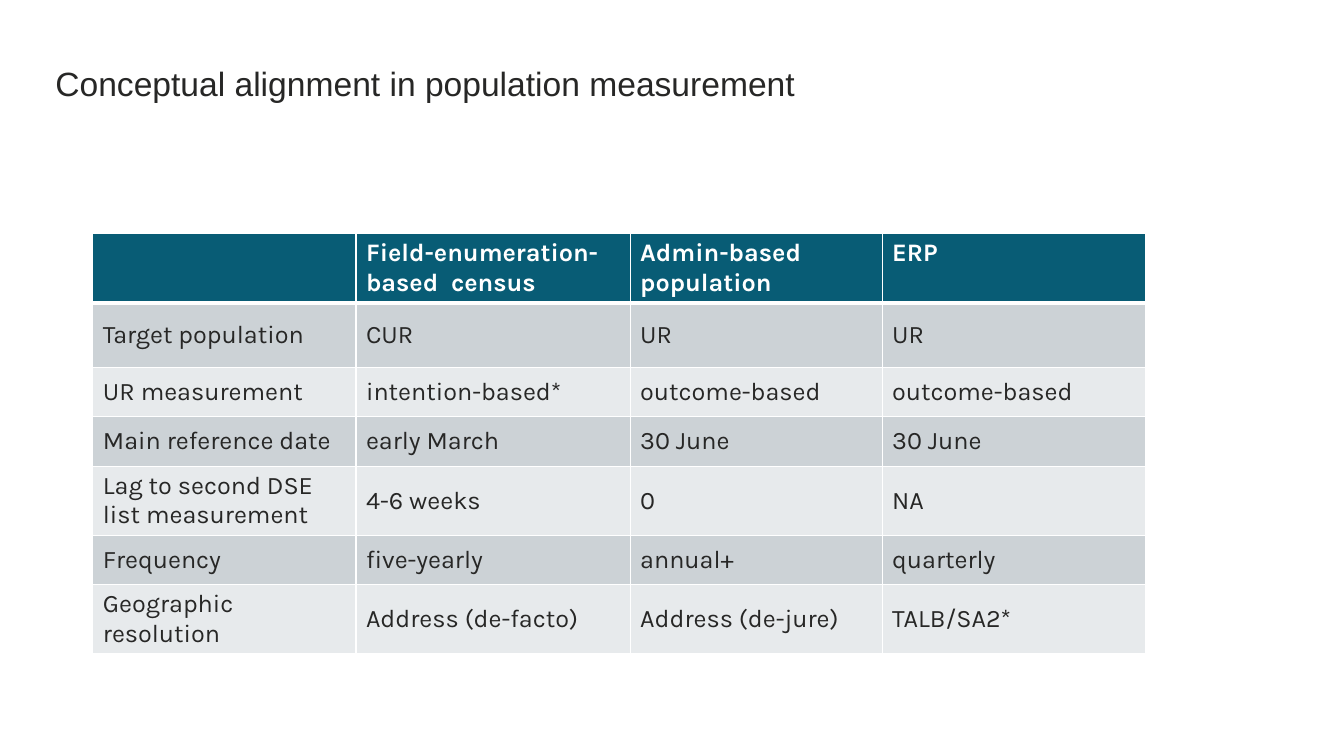
import pptx
import pptx.dml.color
import pptx.enum.text
import pptx.oxml
import pptx.oxml.ns
import pptx.util
from pptx.util import Cm

WHITE, INK, TEAL = "FFFFFF", "272726", "085C75"
BANDS = ("CCD2D6", "E7EAEC")
ANCHOR = pptx.enum.text.MSO_ANCHOR

MEASURES = [
    ("", "Field-enumeration-based  census", "Admin-based population", "ERP"),
    ("Target population", "CUR", "UR", "UR"),
    ("UR measurement", "intention-based*", "outcome-based", "outcome-based"),
    ("Main reference date", "early March", "30 June", "30 June"),
    ("Lag to second DSE list measurement", "4-6 weeks", "0", "NA"),
    ("Frequency", "five-yearly", "annual+", "quarterly"),
    ("Geographic resolution", "Address (de-facto)", "Address (de-jure)", "TALB/SA2*"),
]
COLUMN_WIDTHS = (6.63, 6.91, 6.35, 6.63)
ROW_HEIGHTS = (1.63, 1.63, 1.24, 1.24, 1.63, 1.24, 1.24)


def rgb(value):
    return pptx.dml.color.RGBColor.from_string(value)


def write(frame, text, font="Karla", size=18, color=INK, bold=False, anchor=ANCHOR.MIDDLE):
    frame.word_wrap = True
    frame.vertical_anchor = anchor
    paragraph = frame.paragraphs[0]
    paragraph.alignment = pptx.enum.text.PP_ALIGN.LEFT
    paragraph.font.size = pptx.util.Pt(size)
    if text:
        run = paragraph.add_run()
        run.text = text
        run.font.name = font
        run.font.size = pptx.util.Pt(size)
        run.font.bold = bold
        run.font.color.rgb = rgb(color)


def set_borders(cell, top=1, bottom=1):
    """Draw white cell edges; widths are in points."""
    properties = cell._tc.get_or_add_tcPr()
    widths = {"lnL": 1, "lnR": 1, "lnT": top, "lnB": bottom}
    for position, (edge, width) in enumerate(widths.items()):
        line = pptx.oxml.parse_xml(
            f'<a:{edge} {pptx.oxml.ns.nsdecls("a")} w="{pptx.util.Pt(width)}">'
            f'<a:solidFill><a:srgbClr val="{WHITE}"/></a:solidFill></a:{edge}>')
        properties.insert(position, line)


class Deck:
    def __init__(self):
        self.presentation = pptx.Presentation()
        self.presentation.slide_width = Cm(33.87)
        self.presentation.slide_height = Cm(19.05)
        title_only = self.presentation.slide_layouts[5]
        self.slide = self.presentation.slides.add_slide(title_only)

    def title(self, text, left, top, width, height):
        heading = self.slide.shapes.title
        heading.left, heading.top = Cm(left), Cm(top)
        heading.width, heading.height = Cm(width), Cm(height)
        write(heading.text_frame, text, font="Arial", size=24, anchor=ANCHOR.TOP)

    def table(self, rows, left, top, widths, heights):
        grid = self.slide.shapes.add_table(
            len(rows), len(widths), Cm(left), Cm(top),
            Cm(sum(widths)), Cm(sum(heights))).table
        grid.horz_banding = False
        for column, width in zip(grid.columns, widths):
            column.width = Cm(width)
        for index, (row, height) in enumerate(zip(grid.rows, heights)):
            row.height = Cm(height)
            header = index == 0
            for cell, text in zip(row.cells, rows[index]):
                cell.fill.solid()
                cell.fill.fore_color.rgb = rgb(TEAL if header else BANDS[(index - 1) % 2])
                set_borders(cell, top=3 if index == 1 else 1, bottom=3 if header else 1)
                anchor = ANCHOR.TOP if header else ANCHOR.MIDDLE
                cell.vertical_anchor = anchor
                write(cell.text_frame, text, color=WHITE if header else INK,
                      bold=header, anchor=anchor)


def main():
    deck = Deck()
    deck.title("Conceptual alignment in population measurement", 1.14, 1.45, 25.93, 2.62)
    deck.table(MEASURES, 2.34, 5.89, COLUMN_WIDTHS, ROW_HEIGHTS)
    deck.presentation.save("out.pptx")


if __name__ == "__main__":
    main()
